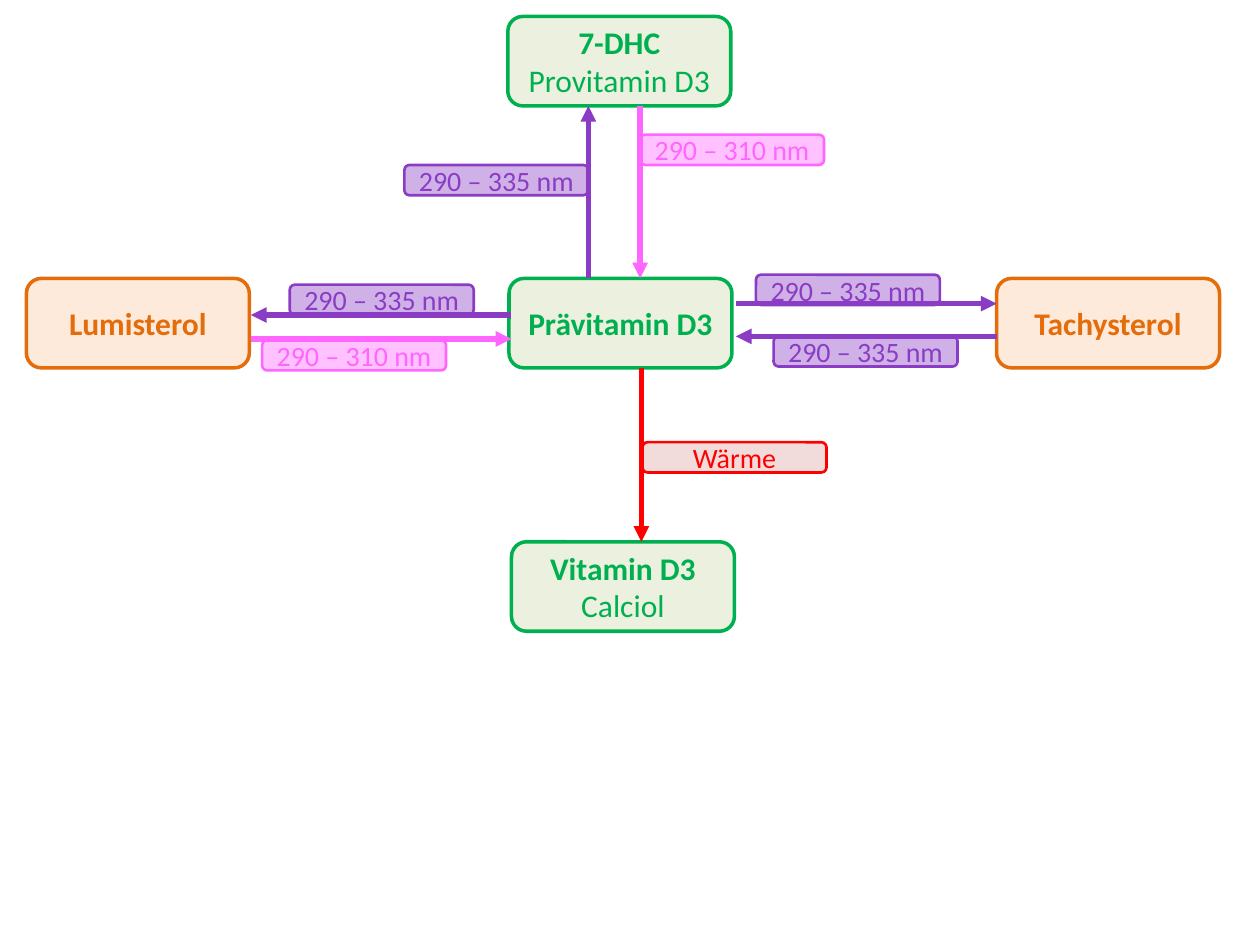
from dataclasses import dataclass

from lxml.etree import SubElement
from pptx import Presentation
from pptx.dml.color import RGBColor
from pptx.enum.shapes import MSO_CONNECTOR, MSO_SHAPE
from pptx.enum.text import MSO_ANCHOR, PP_ALIGN
from pptx.oxml.ns import qn
from pptx.util import Pt

GREEN, PALE_GREEN = "00B050", "EBF1DE"
ORANGE, PALE_ORANGE = "E46C0A", "FDEADA"
RED, PALE_RED = "FF0000", "F2DCDB"
VIOLET, PINK = "8A3CC4", "FF66FF"

# Shared positions in points
SUBSTANCE_SIZE = (127.4, 51.1)
LABEL_SIZE = (105.1, 17.3)
TOP_Y, MIDDLE_Y, BOTTOM_Y = 9.4, 159.1, 309.6
LEFT_ENDS = (143.3, 292.3)
RIGHT_ENDS = (420.5, 569.5)


@dataclass
class Substance:
    left: float
    top: float
    name: str
    synonym: str = ""
    color: str = GREEN
    fill: str = PALE_GREEN


@dataclass
class Label:
    left: float
    top: float
    color: str = VIOLET
    text: str = "290 – 335 nm"
    fill: str = VIOLET
    opacity: int = 40


@dataclass
class Arrow:
    start: tuple[float, float]
    end: tuple[float, float]
    color: str = VIOLET


SUBSTANCES = [
    Substance(290.2, TOP_Y, "7-DHC", "Provitamin D3"),
    Substance(290.9, MIDDLE_Y, "Prävitamin D3"),
    Substance(292.3, BOTTOM_Y, "Vitamin D3", "Calciol"),
    Substance(15.1, MIDDLE_Y, "Lumisterol", color=ORANGE, fill=PALE_ORANGE),
    Substance(569.5, MIDDLE_Y, "Tachysterol", color=ORANGE, fill=PALE_ORANGE),
]
WAVELENGTHS = [
    Label(365.8, 77, PINK, "290 – 310 nm", PINK),
    Label(432, 157),
    Label(165.6, 162.7),
    Label(149.8, 194.4, PINK, "290 – 310 nm", PINK),
    Label(442.1, 192.2),
    Label(231.1, 94.3),
]
HEAT = Label(367.2, 252.7, RED, "Wärme", PALE_RED, 100)
ARROWS = [
    Arrow((366.5, 210.2), (366.5, BOTTOM_Y), RED),
    Arrow((LEFT_ENDS[1], 180), (LEFT_ENDS[0], 180)),
    Arrow((LEFT_ENDS[0], 193.7), (LEFT_ENDS[1], 193.7), PINK),
    Arrow((RIGHT_ENDS[1], 192.2), (RIGHT_ENDS[0], 192.2)),
    Arrow((RIGHT_ENDS[0], 173.5), (RIGHT_ENDS[1], 173.5)),
    Arrow((336.2, MIDDLE_Y), (336.2, 60.5)),
    Arrow((365.8, 60.5), (365.8, MIDDLE_Y), PINK),
]


def rgb(color: str) -> RGBColor:
    return RGBColor.from_string(color)


def add_box(slide, left: float, top: float, size: tuple[float, float],
            fill: str, color: str, line_width: float):
    box = slide.shapes.add_shape(MSO_SHAPE.ROUNDED_RECTANGLE, Pt(left), Pt(top),
                                 *(Pt(length) for length in size))
    box.shadow.inherit = False
    box.fill.solid()
    box.fill.fore_color.rgb = rgb(fill)
    box.line.color.rgb = rgb(color)
    box.line.width = Pt(line_width)
    box.text_frame.vertical_anchor = MSO_ANCHOR.MIDDLE
    return box


def write_line(paragraph, text: str, color: str, size: float, bold: bool = False) -> None:
    paragraph.alignment = PP_ALIGN.CENTER
    run = paragraph.add_run()
    run.text = text
    font_format = {"name": "Calibri", "size": Pt(size), "bold": bold}
    for attribute, value in font_format.items():
        setattr(run.font, attribute, value)
    run.font.color.rgb = rgb(color)


def draw_substance(slide, substance: Substance) -> None:
    box = add_box(slide, substance.left, substance.top, SUBSTANCE_SIZE,
                  substance.fill, substance.color, 2)
    frame = box.text_frame
    write_line(frame.paragraphs[0], substance.name, substance.color, 18, bold=True)
    if substance.synonym:
        write_line(frame.add_paragraph(), substance.synonym, substance.color, 18)


def draw_label(slide, label: Label) -> None:
    box = add_box(slide, label.left, label.top, LABEL_SIZE, label.fill, label.color, 1.5)
    if label.opacity < 100:
        fill_color = box.fill._xPr.find(qn("a:solidFill"))[0]
        SubElement(fill_color, qn("a:alpha"), val=str(label.opacity * 1000))
    write_line(box.text_frame.paragraphs[0], label.text, label.color, 16)


def draw_arrow(slide, arrow: Arrow) -> None:
    ends = (Pt(length) for length in arrow.start + arrow.end)
    connector = slide.shapes.add_connector(MSO_CONNECTOR.STRAIGHT, *ends)
    connector.line.color.rgb = rgb(arrow.color)
    connector.line.width = Pt(3)
    SubElement(connector.line._get_or_add_ln(), qn("a:tailEnd"), type="triangle")
    SubElement(connector._element.spPr, qn("a:effectLst"))


def main() -> None:
    presentation = Presentation()
    presentation.slide_width, presentation.slide_height = Pt(720), Pt(540)
    slide = presentation.slides.add_slide(presentation.slide_layouts[6])

    # Substances
    for substance in SUBSTANCES:
        draw_substance(slide, substance)

    # Wavelengths lie below the reaction arrows
    for wavelength in WAVELENGTHS:
        draw_label(slide, wavelength)
    for arrow in ARROWS:
        draw_arrow(slide, arrow)

    # Heat label lies above its arrow
    draw_label(slide, HEAT)

    presentation.save("out.pptx")


if __name__ == "__main__":
    main()
